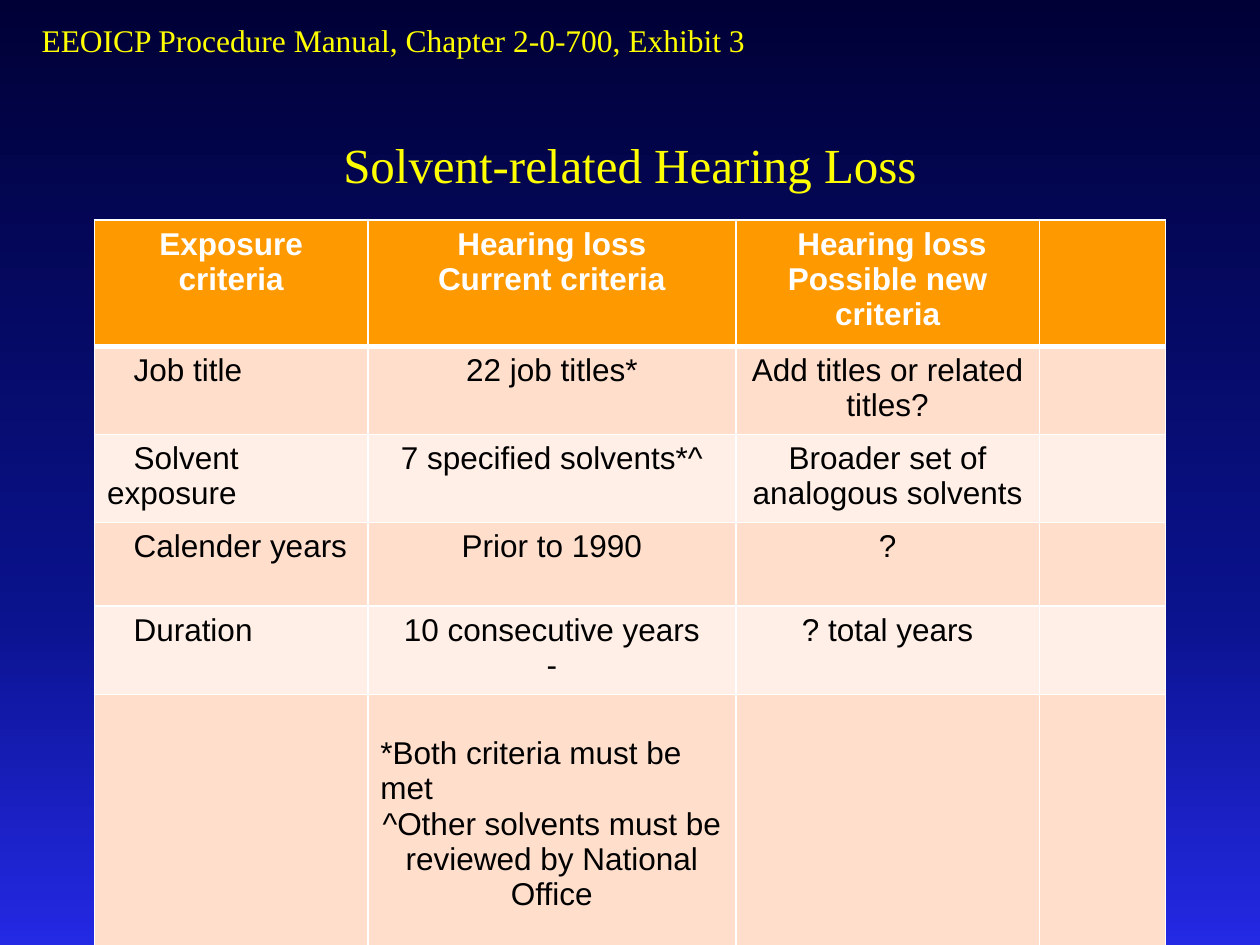
from copy import deepcopy

from pptx import Presentation
from pptx.dml.color import RGBColor
from pptx.enum.text import MSO_ANCHOR, PP_ALIGN
from pptx.oxml import parse_xml
from pptx.oxml.ns import nsdecls, qn
from pptx.util import Inches, Pt

NAVY = RGBColor(0x00, 0x00, 0x36)
BLUE = RGBColor(0x0A, 0x12, 0x8C)
BRIGHT_BLUE = RGBColor(0x24, 0x29, 0xE4)
YELLOW = RGBColor(0xFF, 0xFF, 0x00)
ORANGE = RGBColor(0xFF, 0x99, 0x00)
PEACH = RGBColor(0xFF, 0xDE, 0xCC)
CREAM = RGBColor(0xFF, 0xEF, 0xE7)
WHITE = RGBColor(0xFF, 0xFF, 0xFF)
BLACK = RGBColor(0x00, 0x00, 0x00)

CRITERIA = [
    ["Exposure criteria", "Hearing loss\nCurrent criteria", " Hearing loss\nPossible new criteria", ""],
    ["Job title", "22 job titles*", "Add titles or related titles?", ""],
    ["Solvent exposure", "7 specified solvents*^", "Broader set of analogous solvents", ""],
    ["Calender years", "Prior to 1990", "?", ""],
    ["Duration", "10 consecutive years\n-", "? total years", ""],
    ["", "*Both criteria must be met\n^Other solvents must be reviewed by National Office", "", ""],
]
COLUMN_SHARES = [0.217, 0.292, 0.241, 0.1]
ROW_SHARES = [0.124] + [0.0883] * 4 + [0.274]


class SlideBuilder:
    """Holds the style and the current slide, with lengths as shares of the slide."""

    heading_font = "Times New Roman"
    table_font = "Arial"
    body_size = Pt(18)

    def __init__(self, presentation):
        self.width = presentation.slide_width
        self.height = presentation.slide_height
        self.slide = presentation.slides.add_slide(presentation.slide_layouts[6])

    def across(self, share):
        return round(self.width * share)

    def down(self, share):
        return round(self.height * share)

    def background(self, stops):
        fill = self.slide.background.fill
        fill.gradient()
        fill.gradient_angle = 270
        first = next(self.slide.element.iter(qn("a:gs")))
        for _ in stops[2:]:
            first.addnext(deepcopy(first))
        for stop, (position, color) in zip(fill.gradient_stops, stops):
            stop.position = position
            stop.color.rgb = color

    def text(self, wording, left, top, width, height, size, align, anchor):
        shape = self.slide.shapes.add_textbox(
            self.across(left), self.down(top), self.across(width), self.down(height))
        frame = shape.text_frame
        frame.word_wrap = True
        frame.vertical_anchor = anchor
        frame.text = wording
        paragraph = frame.paragraphs[0]
        paragraph.alignment = align
        self.font(paragraph, self.heading_font, size, YELLOW)
        return frame

    def font(self, paragraph, name, size, color, bold=False):
        paragraph.font.name = name
        paragraph.font.size = size
        paragraph.font.bold = bold
        paragraph.font.color.rgb = color

    def borders(self, cell, widths):
        properties = cell._tc.get_or_add_tcPr()
        for index, (side, width) in enumerate(zip("LRTB", widths)):
            properties.insert(index, parse_xml(
                f'<a:ln{side} {nsdecls("a")} w="{Pt(width)}"><a:solidFill>'
                f'<a:srgbClr val="{WHITE}"/></a:solidFill></a:ln{side}>'))

    def cell(self, cell, wording, row, column):
        header = row == 0
        cell.fill.solid()
        cell.fill.fore_color.rgb = ORANGE if header else PEACH if row % 2 else CREAM
        self.borders(cell, [1, 1, 3 if row == 1 else 1, 3 if header else 1])
        cell.text = wording
        label = column == 0 and not header
        for paragraph in cell.text_frame.paragraphs:
            left_aligned = label or paragraph.text.startswith("*")
            paragraph.alignment = PP_ALIGN.LEFT if left_aligned else PP_ALIGN.CENTER
            self.font(paragraph, self.table_font, self.body_size, WHITE if header else BLACK, header)
            if label:
                paragraph._p.get_or_add_pPr().set("indent", str(Inches(0.21)))

    def table(self, rows, left, top, column_shares, row_shares):
        table = self.slide.shapes.add_table(
            len(rows), len(column_shares), self.across(left), self.down(top),
            self.across(sum(column_shares)), self.down(sum(row_shares))).table
        for column, share in zip(table.columns, column_shares):
            column.width = self.across(share)
        for row, share in zip(table.rows, row_shares):
            row.height = self.down(share)
        for row, wordings in enumerate(rows):
            for column, wording in enumerate(wordings):
                self.cell(table.cell(row, column), wording, row, column)
        return table


def main():
    presentation = Presentation()
    presentation.slide_width = Inches(10)
    presentation.slide_height = Inches(7.5)
    builder = SlideBuilder(presentation)
    builder.background([(0, NAVY), (0.64, BLUE), (1, BRIGHT_BLUE)])
    builder.text("Solvent-related Hearing Loss", 0.075, 0.09, 0.85, 0.167,
                 Pt(28), PP_ALIGN.CENTER, MSO_ANCHOR.MIDDLE)
    table = builder.table(CRITERIA, 0.075, 0.233, COLUMN_SHARES, ROW_SHARES)
    table.cell(5, 1).margin_top = Inches(0.33)
    source = builder.text("EEOICP Procedure Manual, Chapter 2-0-700, Exhibit 3", 0, 0, 0.892, 0.215,
                          Pt(18), PP_ALIGN.LEFT, MSO_ANCHOR.TOP)
    source.margin_left = Inches(0.33)
    source.margin_top = Inches(0.17)
    presentation.save("out.pptx")


if __name__ == "__main__":
    main()
